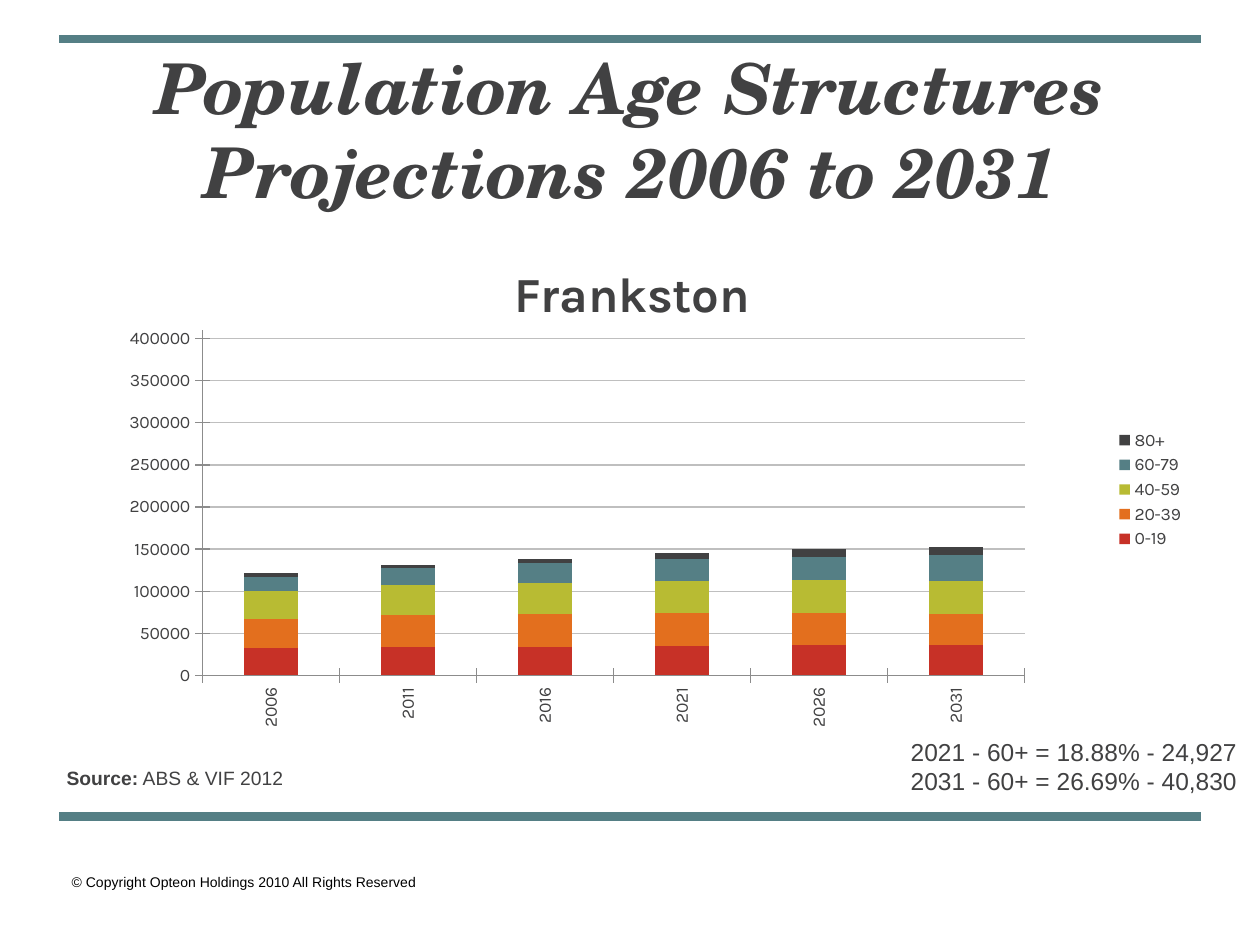
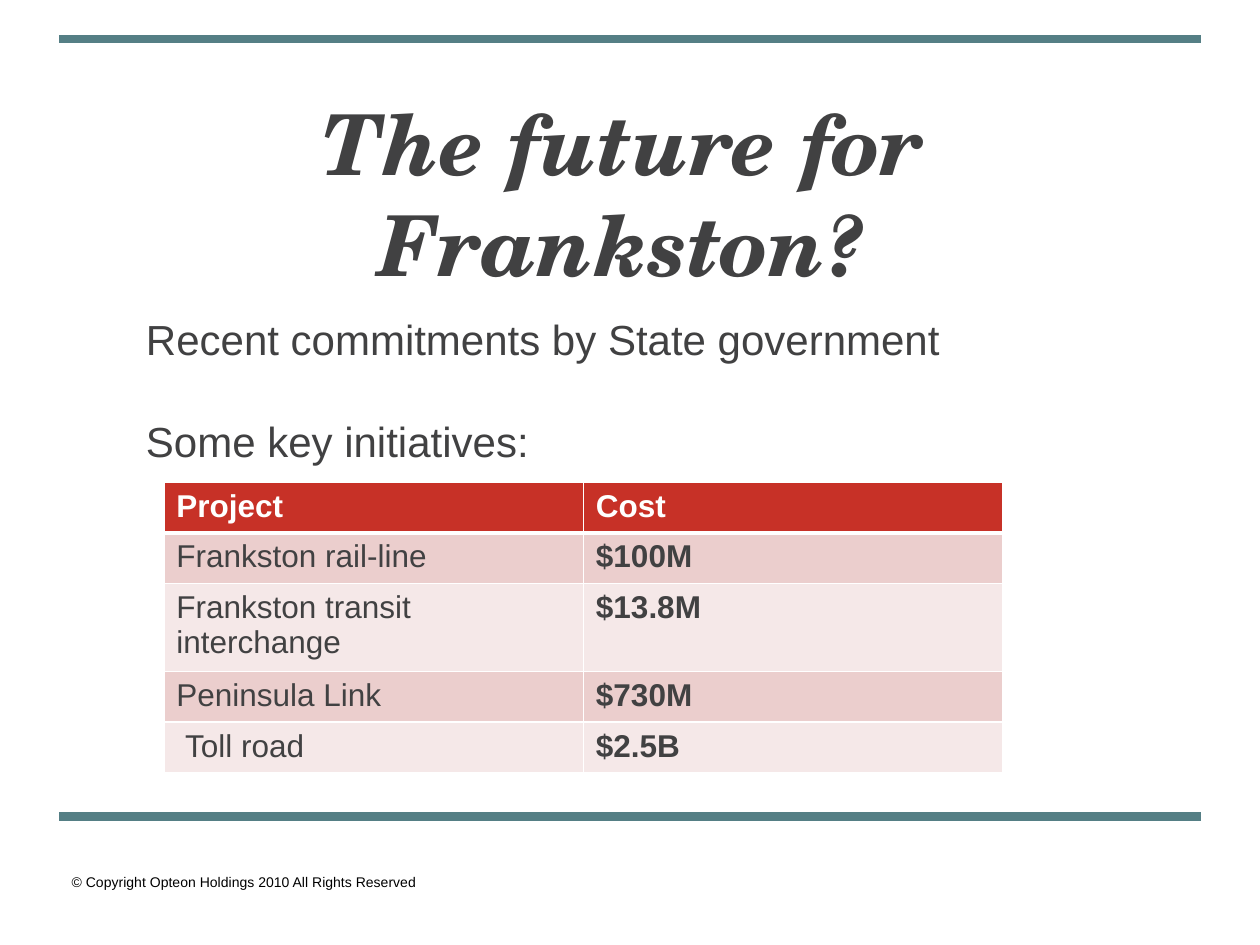
from lxml import etree
from pptx import Presentation
from pptx.chart.data import CategoryChartData
from pptx.dml.color import RGBColor
from pptx.enum.chart import XL_CHART_TYPE, XL_LEGEND_POSITION, XL_TICK_MARK
from pptx.enum.shapes import MSO_CONNECTOR
from pptx.enum.text import MSO_ANCHOR, MSO_AUTO_SIZE, PP_ALIGN
from pptx.oxml import parse_xml
from pptx.oxml.ns import nsdecls, qn
from pptx.util import Inches, Pt

STACKED = XL_CHART_TYPE.COLUMN_STACKED
RIGHT = XL_LEGEND_POSITION.RIGHT
CROSS = XL_TICK_MARK.CROSS
STRAIGHT = MSO_CONNECTOR.STRAIGHT
TOP = MSO_ANCHOR.TOP
NO_FIT = MSO_AUTO_SIZE.NONE
CENTER = PP_ALIGN.CENTER

# Colours and fonts
INK = RGBColor(0x41, 0x41, 0x42)
TEAL = RGBColor(0x55, 0x7F, 0x85)
RED = RGBColor(0xC7, 0x31, 0x27)
ORANGE = RGBColor(0xE3, 0x6F, 0x1E)
LIME = RGBColor(0xB8, 0xBB, 0x33)
ROSE = RGBColor(0xEB, 0xCE, 0xCD)
BLUSH = RGBColor(0xF5, 0xE8, 0xE8)
GRID = RGBColor(0xBF, 0xBF, 0xBF)
AXIS = RGBColor(0x8C, 0x8C, 0x8C)
WHITE = RGBColor(0xFF, 0xFF, 0xFF)
BLACK = RGBColor(0, 0, 0)
SANS, SERIF, LABEL = "Arial", "TeX Gyre Schola", "Karla"

# Shared content
RULES = (0.31, 6.48)
RIGHTS = "© Copyright Opteon Holdings 2010 All Rights Reserved"

# Slide 1 content
AGE_TITLE = "Population Age Structures Projections 2006 to 2031"
PLACE = "Frankston"
YEARS = ("2006", "2011", "2016", "2021", "2026", "2031")
AGES = (
    ("0-19", RED, (33000, 34000, 34000, 35000, 36000, 36000)),
    ("20-39", ORANGE, (34000, 38000, 39000, 39000, 38000, 37000)),
    ("40-59", LIME, (33000, 35000, 37000, 38000, 39000, 39000)),
    ("60-79", TEAL, (17000, 20000, 23000, 26000, 28000, 31000)),
    ("80+", INK, (4000, 4000, 5000, 7000, 9000, 9000)),
)
SOURCE = ("Source:", " ABS & VIF 2012")
SHARES = ("2021 - 60+ = 18.88% - 24,927", "2031 - 60+ = 26.69% - 40,830")

# Slide 2 content
PLAN_TITLE = "The future for Frankston?"
POINTS = ("Recent commitments by State government", "Some key initiatives:")
COSTS = (
    ("Project", "Cost"),
    ("Frankston rail-line", "$100M"),
    ("Frankston transit interchange", "$13.8M"),
    ("Peninsula Link", "$730M"),
    ("Toll road", "$2.5B"),
)
ROW_HIGH = (0.4, 0.4, 0.7, 0.4, 0.4)
COL_WIDE = 3.33


def style(font, size, color=INK, name=SANS, bold=None):
    font.size, font.name, font.bold = Pt(size), name, bold
    font.color.rgb = color


def add_text(slide, box, lines, size, color=INK, gap=0, wrap=True):
    frame = slide.shapes.add_textbox(*map(Inches, box)).text_frame
    frame.word_wrap = wrap
    for i, line in enumerate(lines):
        para = frame.paragraphs[0] if i == 0 else frame.add_paragraph()
        para.text = line
        style(para.font, size, color)
        if i:
            para.space_before = Pt(gap)
    return frame


def add_slide(deck, title, box, size):
    slide = deck.slides.add_slide(deck.slide_layouts[5])
    # Rules and copyright line
    for y in RULES:
        rule = slide.shapes.add_connector(
            STRAIGHT, Inches(0.47), Inches(y), Inches(9.53), Inches(y))
        rule.line.color.rgb, rule.line.width = TEAL, Pt(5)
        etree.SubElement(rule._element.spPr, qn("a:effectLst"))
    add_text(slide, (0.47, 6.88, 3.09, 0.36), [RIGHTS], 8, BLACK)
    # Title
    head = slide.shapes.title
    head.left, head.top, head.width, head.height = map(Inches, box)
    frame = head.text_frame
    frame.text = title
    frame.vertical_anchor, frame.auto_size = TOP, NO_FIT
    frame.word_wrap = True
    para = frame.paragraphs[0]
    para.alignment = CENTER
    style(para.font, size, name=SERIF, bold=True)
    para.font.italic = True
    return slide


def layout(x, y, size=None):
    """Manual chart layout in fractions of the chart area."""
    parts = [("xMode", "edge"), ("yMode", "edge"), ("x", x), ("y", y)]
    if size:
        parts.insert(0, ("layoutTarget", "inner"))
        parts += [("w", size[0]), ("h", size[1])]
    body = "".join(f'<c:{tag} val="{val}"/>' for tag, val in parts)
    return parse_xml(f'<c:layout {nsdecls("c")}><c:manualLayout>{body}'
                     "</c:manualLayout></c:layout>")


def set_layout(parent, new, spot):
    for old in parent.findall(qn("c:layout")):
        parent.remove(old)
    parent.insert(spot, new)


def add_chart(slide):
    data = CategoryChartData()
    data.categories = YEARS
    for name, _, vals in AGES:
        data.add_series(name, vals)
    box = map(Inches, (0.5, 1.75, 9, 4.27))
    chart = slide.shapes.add_chart(STACKED, *box, data).chart
    style(chart.font, 10, name=LABEL)

    # Chart title
    chart.has_title = True
    chart.chart_title.text_frame.text = PLACE
    para = chart.chart_title.text_frame.paragraphs[0]
    style(para.font, 28, name=LABEL, bold=True)
    title = chart.chart_title._element
    set_layout(title, layout(0.39, 0.06), 1)
    title.find(qn("c:overlay")).set("val", "1")

    # Columns
    plot = chart.plots[0]
    plot.gap_width, plot.overlap = 150, 100
    plot.vary_by_categories = False
    for series, (_, color, _) in zip(plot.series, AGES):
        series.format.fill.solid()
        series.format.fill.fore_color.rgb = color
    area = chart._chartSpace.chart.plotArea
    set_layout(area, layout(0.123, 0.204, (0.725, 0.642)), 0)

    # Axes and legend
    for axis in (chart.category_axis, chart.value_axis):
        axis.major_tick_mark = CROSS
        axis.format.line.color.rgb = AXIS
        style(axis.tick_labels.font, 10, name=LABEL)
    turn = chart.category_axis._element.find(qn("c:txPr"))
    turn.find(qn("a:bodyPr")).set("rot", "-5400000")
    axis = chart.value_axis
    axis.minimum_scale, axis.maximum_scale = 0, 410000
    axis.major_unit = 50000
    axis.major_gridlines.format.line.color.rgb = GRID
    axis.major_gridlines.format.line.width = Pt(0.75)
    chart.has_legend = True
    chart.legend.position = RIGHT
    chart.legend.include_in_layout = False
    style(chart.legend.font, 10, name=LABEL)


def add_border(cell, side, width):
    line = parse_xml(
        f'<a:{side} {nsdecls("a")} w="{Pt(width)}"><a:solidFill>'
        f'<a:srgbClr val="{WHITE}"/></a:solidFill></a:{side}>')
    props = cell._tc.get_or_add_tcPr()
    lines = [kid for kid in props if kid.tag.startswith(qn("a:ln"))]
    props.insert(len(lines), line)


def add_costs(slide):
    rows, cols = len(COSTS), len(COSTS[0])
    table = slide.shapes.add_table(
        rows, cols, Inches(1.3), Inches(3.83),
        Inches(COL_WIDE * cols), Inches(sum(ROW_HIGH))).table
    for col in table.columns:
        col.width = Inches(COL_WIDE)
    for r, (row, high) in enumerate(zip(COSTS, ROW_HIGH)):
        table.rows[r].height = Inches(high)
        fill = RED if r == 0 else ROSE if r % 2 else BLUSH
        for c, text in enumerate(row):
            cell = table.cell(r, c)
            cell.text = text
            cell.fill.solid()
            cell.fill.fore_color.rgb = fill
            style(cell.text_frame.paragraphs[0].font, 18,
                  INK if r else WHITE, bold=r == 0 or c == 1)
            for side in ("lnL", "lnR", "lnT", "lnB"):
                edge = (r, side) in ((0, "lnB"), (1, "lnT"))
                add_border(cell, side, 3 if edge else 1)
    table.cell(rows - 1, 0).margin_left = Inches(0.17)


def main():
    deck = Presentation()
    deck.slide_width, deck.slide_height = Inches(10), Inches(7.5)

    # Slide 1: age structure
    slide = add_slide(deck, AGE_TITLE, (0.5, 0.3, 9, 1.25), 40)
    add_chart(slide)
    label, text = SOURCE
    frame = add_text(slide, (0.43, 6.03, 1.94, 0.29), [label], 11, wrap=False)
    para = frame.paragraphs[0]
    para.runs[0].font.bold = True
    para.add_run().text = text
    add_text(slide, (7.13, 5.8, 2.87, 0.57), SHARES, 14)

    # Slide 2: key projects
    slide = add_slide(deck, PLAN_TITLE, (0.44, 0.68, 9, 0.55), 48)
    add_text(slide, (1.06, 2.44, 8.11, 1.3), POINTS, 24, gap=29.5)
    add_costs(slide)

    deck.save("out.pptx")


if __name__ == "__main__":
    main()
